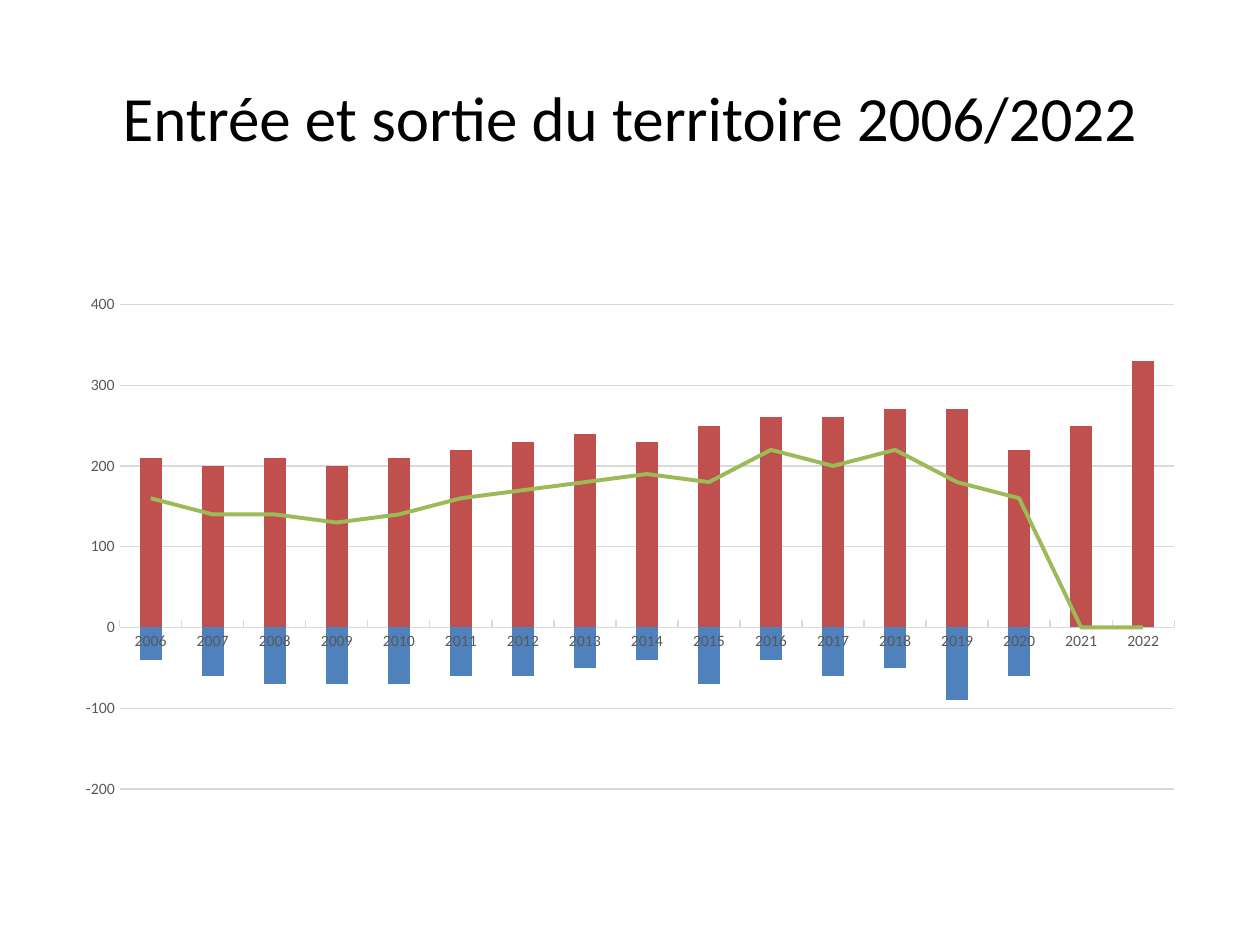
import pptx
import pptx.chart.data
import pptx.dml.color
import pptx.enum.chart
import pptx.enum.text
import pptx.oxml
import pptx.oxml.ns
import pptx.util
from pptx.util import Inches

COLORS = {"exits": "4F81BD", "entries": "C0504D", "balance": "9BBB59",
          "text": "000000", "labels": "595959", "grid": "D9D9D9"}
FONT = "Calibri"
YEARS = [str(year) for year in range(2006, 2023)]
EXITS = [-40, -60, -70, -70, -70, -60, -60, -50, -40, -70, -40, -60, -50, -90, -60, None, None]
ENTRIES = [210, 200, 210, 200, 210, 220, 230, 240, 230, 250, 260, 260, 270, 270, 220, 250, 330]
BALANCE = [160, 140, 140, 130, 140, 160, 170, 180, 190, 180, 220, 200, 220, 180, 160, None, None]


def color(name):
    return pptx.dml.color.RGBColor.from_string(COLORS[name])


def set_font(font, size, color_name):
    font.name = FONT
    font.size = pptx.util.Pt(size)
    font.color.rgb = color(color_name)


def set_line(line, color_name, width):
    line.color.rgb = color(color_name)
    line.width = pptx.util.Pt(width)


def add_title(slide, text):
    shape = slide.shapes.add_textbox(Inches(0.5), Inches(0.3), Inches(9), Inches(1.25))
    frame = shape.text_frame
    frame.word_wrap = True
    frame.vertical_anchor = pptx.enum.text.MSO_ANCHOR.MIDDLE
    paragraph = frame.paragraphs[0]
    paragraph.text = text
    paragraph.alignment = pptx.enum.text.PP_ALIGN.CENTER
    set_font(paragraph.font, 36, "text")


def remove_children(parent, tag):
    for child in parent.findall(pptx.oxml.ns.qn(tag)):
        parent.remove(child)


def move_last_series_to_line(chart):
    """Turn the last column series into a line on the same axes."""
    bar_chart = chart.plots[0]._element
    series = bar_chart.findall(pptx.oxml.ns.qn("c:ser"))[-1]
    remove_children(series, "c:invertIfNegative")
    line_chart = pptx.oxml.parse_xml(
        f'<c:lineChart {pptx.oxml.ns.nsdecls("c")}><c:grouping val="standard"/>'
        '<c:varyColors val="0"/><c:marker val="1"/></c:lineChart>')
    line_chart.insert(2, series)
    for axis_id in bar_chart.findall(pptx.oxml.ns.qn("c:axId")):
        line_chart.append(pptx.oxml.parse_xml(
            f'<c:axId {pptx.oxml.ns.nsdecls("c")} val="{axis_id.get("val")}"/>'))
    bar_chart.addnext(line_chart)


def set_plot_layout(chart, x, y, w, h):
    plot_area = chart._chartSpace.chart.plotArea
    remove_children(plot_area, "c:layout")
    sizes = "".join(f'<c:{key} val="{value}"/>'
                    for key, value in (("x", x), ("y", y), ("w", w), ("h", h)))
    plot_area.insert(0, pptx.oxml.parse_xml(
        f'<c:layout {pptx.oxml.ns.nsdecls("c")}><c:manualLayout>'
        '<c:layoutTarget val="inner"/><c:xMode val="edge"/><c:yMode val="edge"/>'
        f'{sizes}</c:manualLayout></c:layout>'))


def show_blanks_as_zero(chart):
    chart_element = chart._chartSpace.chart
    remove_children(chart_element, "c:dispBlanksAs")
    chart_element.append(pptx.oxml.parse_xml(
        f'<c:dispBlanksAs {pptx.oxml.ns.nsdecls("c")} val="zero"/>'))


def style_axes(chart):
    tick_mark = pptx.enum.chart.XL_TICK_MARK
    category_axis, value_axis = chart.category_axis, chart.value_axis
    for axis in (category_axis, value_axis):
        set_font(axis.tick_labels.font, 9, "labels")
    category_axis.major_tick_mark = tick_mark.INSIDE
    category_axis.minor_tick_mark = tick_mark.NONE
    set_line(category_axis.format.line, "grid", 0.75)
    value_axis.major_tick_mark = tick_mark.NONE
    value_axis.minor_tick_mark = tick_mark.NONE
    value_axis.minimum_scale = -200
    value_axis.maximum_scale = 400
    value_axis.major_unit = 100
    value_axis.format.line.fill.background()
    value_axis.has_major_gridlines = True
    set_line(value_axis.major_gridlines.format.line, "grid", 0.75)


def add_flow_chart(slide):
    data = pptx.chart.data.CategoryChartData()
    data.categories = YEARS
    for number, values in enumerate((EXITS, ENTRIES, BALANCE), 1):
        data.add_series(f"Series {number}", values)
    chart = slide.shapes.add_chart(
        pptx.enum.chart.XL_CHART_TYPE.COLUMN_STACKED,
        Inches(0.5), Inches(2.25), Inches(9), Inches(4.18), data).chart
    chart.has_legend = False
    chart.has_title = False
    set_font(chart.font, 10, "text")
    move_last_series_to_line(chart)
    set_plot_layout(chart, 0.05, 0.04, 0.93, 0.92)
    show_blanks_as_zero(chart)
    columns, lines = chart.plots
    columns.gap_width = 182
    columns.overlap = 100
    columns.vary_by_categories = False
    for series, name in zip(columns.series, ("exits", "entries")):
        series.invert_if_negative = False
        series.format.fill.solid()
        series.format.fill.fore_color.rgb = color(name)
    balance = lines.series[0]
    balance.smooth = False
    balance.marker.style = pptx.enum.chart.XL_MARKER_STYLE.NONE
    set_line(balance.format.line, "balance", 2.25)
    style_axes(chart)


def main():
    presentation = pptx.Presentation()
    presentation.slide_width = Inches(10)
    presentation.slide_height = Inches(7.5)
    slide = presentation.slides.add_slide(presentation.slide_layouts[6])
    add_title(slide, "Entrée et sortie du territoire 2006/2022")
    add_flow_chart(slide)
    presentation.save("out.pptx")


if __name__ == "__main__":
    main()
